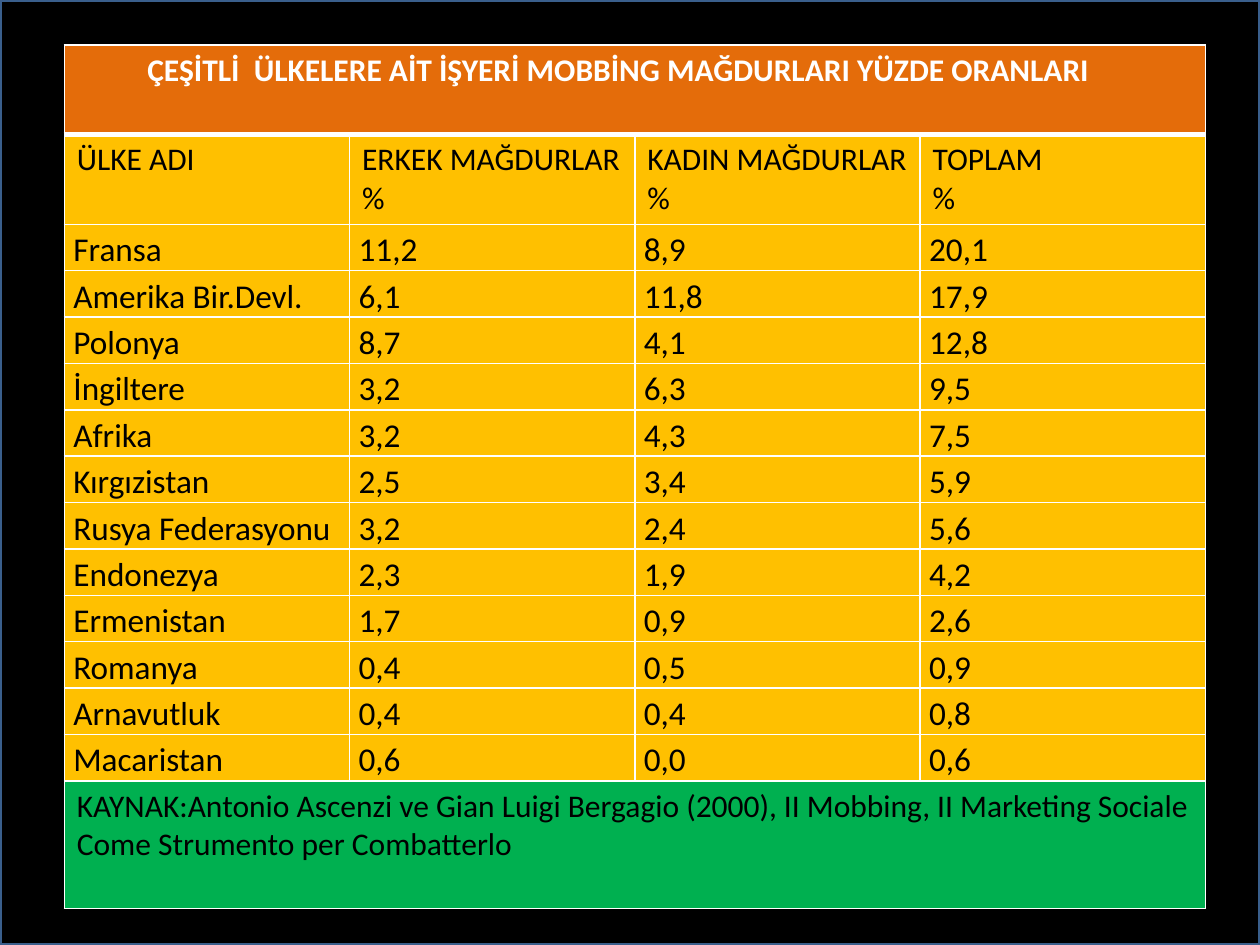
from lxml.etree import SubElement
from pptx import Presentation
from pptx.dml.color import RGBColor
from pptx.enum.shapes import MSO_SHAPE as Shape
from pptx.oxml.ns import qn
from pptx.util import Cm, Pt

BLACK = RGBColor(0x00, 0x00, 0x00)
WHITE = RGBColor(0xFF, 0xFF, 0xFF)
BLUE = RGBColor(0x3A, 0x5F, 0x8C)
ORANGE = RGBColor(0xE4, 0x6C, 0x0A)
YELLOW = RGBColor(0xFF, 0xC0, 0x00)
GREEN = RGBColor(0x00, 0xB0, 0x50)

TITLE = "ÇEŞİTLİ  ÜLKELERE AİT İŞYERİ MOBBİNG MAĞDURLARI YÜZDE ORANLARI"
HEADERS = ["ÜLKE ADI", "ERKEK MAĞDURLAR %", "KADIN MAĞDURLAR %", "TOPLAM\n%"]
COUNTRIES = [
    ["Fransa", "11,2", "8,9", "20,1"],
    ["Amerika Bir.Devl.", "6,1", "11,8", "17,9"],
    ["Polonya", "8,7", "4,1", "12,8"],
    ["İngiltere", "3,2", "6,3", "9,5"],
    ["Afrika", "3,2", "4,3", "7,5"],
    ["Kırgızistan", "2,5", "3,4", "5,9"],
    ["Rusya Federasyonu", "3,2", "2,4", "5,6"],
    ["Endonezya", "2,3", "1,9", "4,2"],
    ["Ermenistan", "1,7", "0,9", "2,6"],
    ["Romanya", "0,4", "0,5", "0,9"],
    ["Arnavutluk", "0,4", "0,4", "0,8"],
    ["Macaristan", "0,6", "0,0", "0,6"],
]
SOURCE = ("KAYNAK:Antonio Ascenzi ve Gian Luigi Bergagio (2000), II Mobbing, "
          "II Marketing Sociale Come Strumento per Combatterlo")


class SlideBuilder:
    font_name = "Calibri"

    def __init__(self, slide):
        self.slide = slide

    def rectangle(self, left, top, width, height, fill, line, line_width):
        shape = self.slide.shapes.add_shape(
            Shape.RECTANGLE, Cm(left), Cm(top), Cm(width), Cm(height))
        shape.shadow.inherit = False
        shape.fill.solid()
        shape.fill.fore_color.rgb = fill
        shape.line.color.rgb = line
        shape.line.width = Pt(line_width)

    def table(self, left, top, column_widths, row_heights):
        table = self.slide.shapes.add_table(
            len(row_heights), len(column_widths), Cm(left), Cm(top),
            Cm(sum(column_widths)), Cm(sum(row_heights))).table
        table.first_row = table.horz_banding = False
        for column, width in zip(table.columns, column_widths):
            column.width = Cm(width)
        for row, height in zip(table.rows, row_heights):
            row.height = Cm(height)
        return table

    def borders(self, cell, top=1, bottom=1):
        properties = cell._tc.get_or_add_tcPr()
        for side, width in (("L", 1), ("R", 1), ("T", top), ("B", bottom)):
            line = SubElement(properties, qn(f"a:ln{side}"), w=str(Pt(width)))
            fill = SubElement(line, qn("a:solidFill"))
            SubElement(fill, qn("a:srgbClr"), val=str(WHITE))

    def row(self, table, index, texts, fill, size=18, color=BLACK, bold=False,
            margins=(0.25, 0.13), spacing=None, top=1, bottom=1):
        cells = list(table.rows[index].cells)
        if len(texts) == 1:
            cells[0].merge(cells[-1])
        for cell in cells:
            self.borders(cell, top, bottom)
            cell.fill.solid()
            cell.fill.fore_color.rgb = fill
        for cell, text in zip(cells, texts):
            horizontal, vertical = margins
            cell.margin_left = cell.margin_right = Cm(horizontal)
            cell.margin_top = cell.margin_bottom = Cm(vertical)
            cell.text = text
            for paragraph in cell.text_frame.paragraphs:
                paragraph.line_spacing = spacing
                font = paragraph.font
                font.name = self.font_name
                font.size = Pt(size)
                font.bold = bold
                font.color.rgb = color


def main():
    presentation = Presentation()
    presentation.slide_width = Cm(25.4)
    presentation.slide_height = Cm(19.05)
    builder = SlideBuilder(
        presentation.slides.add_slide(presentation.slide_layouts[6]))

    builder.rectangle(0, 0, 25.4, 19.05, BLACK, BLUE, 2)
    heights = [1.8, 1.8] + [0.93] * len(COUNTRIES) + [2.57]
    table = builder.table(1.3, 0.91, [5.75] * len(HEADERS), heights)
    builder.row(table, 0, [TITLE], ORANGE, color=WHITE, bold=True,
                margins=(1.67, 0.13), bottom=3)
    builder.row(table, 1, HEADERS, YELLOW, top=3)
    for index, country in enumerate(COUNTRIES, start=2):
        builder.row(table, index, country, YELLOW, size=19,
                    margins=(0.18, 0), spacing=1.15)
    builder.row(table, len(heights) - 1, [SOURCE], GREEN)

    presentation.save("out.pptx")


if __name__ == "__main__":
    main()
